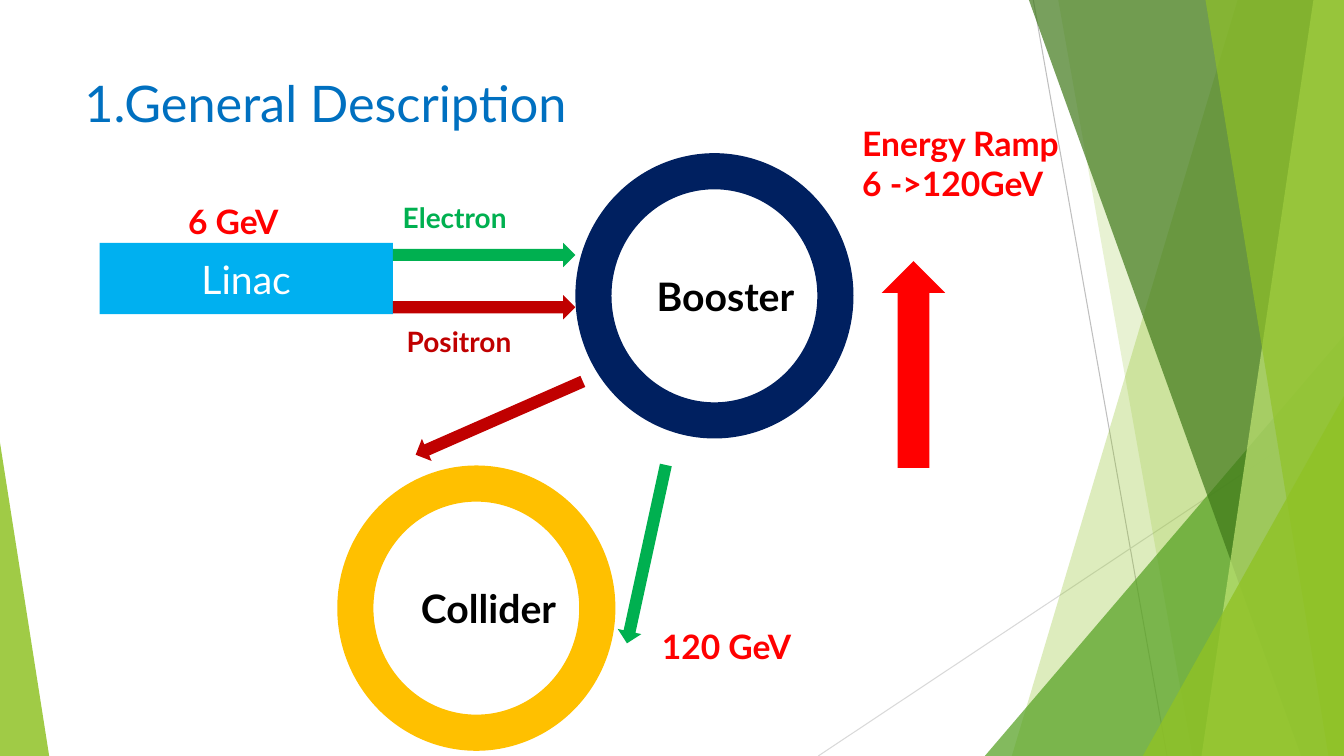
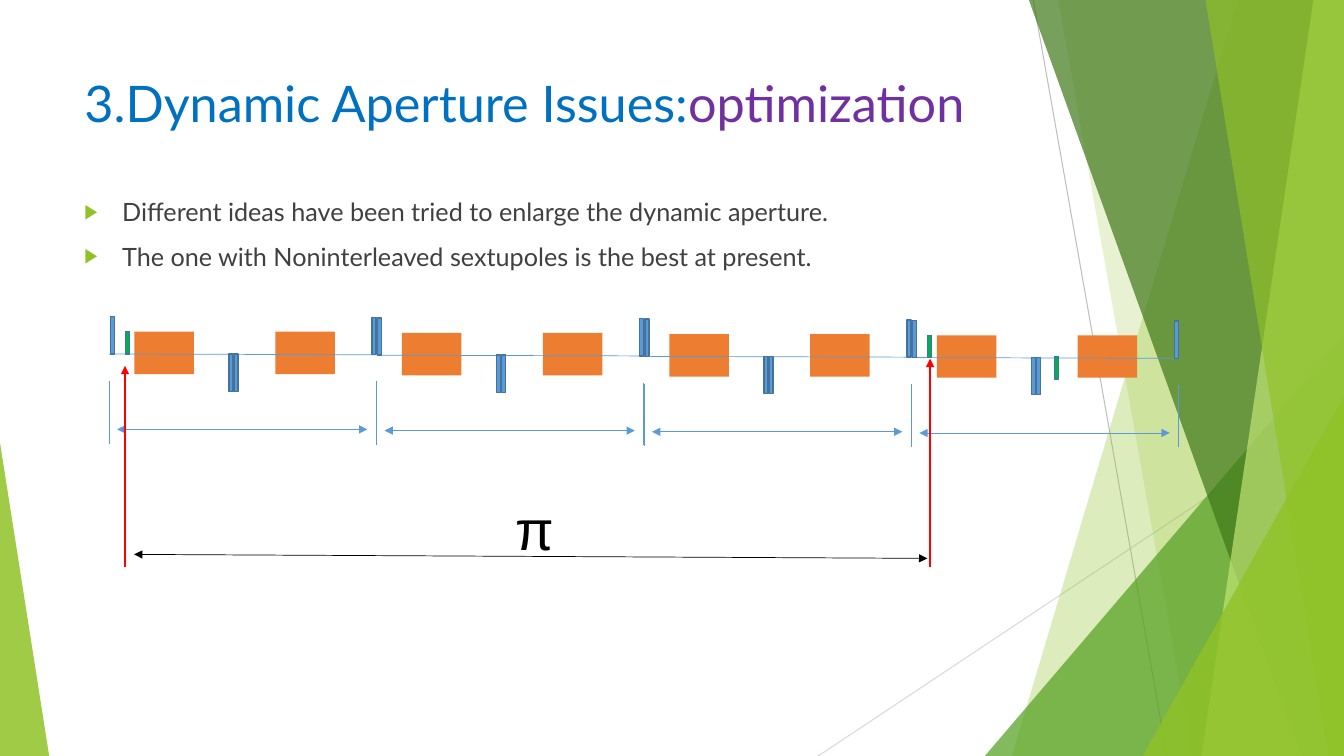
from lxml.etree import SubElement
from pptx import Presentation
from pptx.dml.color import RGBColor
from pptx.enum.shapes import MSO_CONNECTOR, MSO_SHAPE as Form
from pptx.enum.text import MSO_ANCHOR, PP_ALIGN
from pptx.oxml.ns import qn
from pptx.util import Cm, Pt

WIDTH, HEIGHT = 33.87, 19.05
FONT = "Lato"
COLORS = {
    "lime": "90C226", "leaf": "54A021", "forest": "3F7819", "pale": "C0E474",
    "grey": "BFBFBF", "light grey": "D9D9D9", "body": "404040",
    "black": "000000", "white": "FFFFFF", "title": "0070C0",
    "purple": "7030A0", "sky": "00B0F0", "navy": "002060",
    "gold": "FFC000", "green": "00B050", "dark red": "C00000",
    "red": "FF0000", "orange": "ED7D31", "blue": "5B9BD5", "edge": "43739E",
}


def color(name):
    return RGBColor.from_string(COLORS[name])


def paint(shape, fill, opacity=100, edge=None):
    """Give a shape a flat fill, with opacity in percent, and an optional edge."""
    shape.shadow.inherit = False
    shape.fill.solid()
    shape.fill.fore_color.rgb = color(fill)
    if opacity < 100:
        tint = next(shape.element.spPr.iter(qn("a:srgbClr")))
        SubElement(tint, qn("a:alpha"), val=str(opacity * 1000))
    if edge:
        shape.line.color.rgb = color(edge)
        shape.line.width = Pt(1)
    else:
        shape.line.fill.background()


def add_form(page, form, left, top, width, height, fill, opacity=100,
             edge=None, adjust=None, turn=0):
    shape = page.shapes.add_shape(form, Cm(left), Cm(top), Cm(width), Cm(height))
    paint(shape, fill, opacity, edge)
    if adjust is not None:
        shape.adjustments[0] = adjust
    shape.rotation = turn
    return shape


def add_line(page, start, end, line_color, weight, head=False, tail=False):
    """Draw a line with arrowheads at its start (head) and end (tail)."""
    ends = [Cm(value) for value in (*start, *end)]
    line = page.shapes.add_connector(MSO_CONNECTOR.STRAIGHT, *ends)
    line.line.color.rgb = color(line_color)
    line.line.width = Pt(weight)
    outline = line.line._get_or_add_ln()
    for tag, wanted in (("a:headEnd", head), ("a:tailEnd", tail)):
        if wanted:
            SubElement(outline, qn(tag), type="triangle")
    SubElement(line.element.spPr, qn("a:effectLst"))


def add_span(para, words, size, text_color, bold=False, font=FONT):
    span = para.add_run()
    span.text = words
    span.font.name = font
    span.font.size = Pt(size)
    span.font.bold = bold
    span.font.color.rgb = color(text_color)


def add_box(page, left, top, width, height):
    box = page.shapes.add_textbox(Cm(left), Cm(top), Cm(width), Cm(height))
    box.text_frame.word_wrap = True
    return box.text_frame


def add_label(page, left, top, width, height, lines, size, text_color,
              bold=True, font=FONT):
    frame = add_box(page, left, top, width, height)
    for index, words in enumerate(lines):
        para = frame.add_paragraph() if index else frame.paragraphs[0]
        add_span(para, words, size, text_color, bold, font)


def add_band(page, top_x, bottom_x, fill, opacity):
    """Fill from a slanted left side to the right edge of the page."""
    corners = [(WIDTH, 0), (WIDTH, HEIGHT), (bottom_x, HEIGHT)]
    builder = page.shapes.build_freeform(Cm(top_x), Cm(0))
    builder.add_line_segments([(Cm(x), Cm(y)) for x, y in corners], close=True)
    paint(builder.convert_to_shape(), fill, opacity)


def add_corner(page, left, width, height, fill, opacity, adjust=1):
    add_form(page, Form.ISOSCELES_TRIANGLE, left, HEIGHT - height, width, height,
             fill, opacity, adjust=adjust)


def add_backdrop(page):
    add_line(page, (26.04, 0), (29.41, HEIGHT), "grey", 0.75)
    add_line(page, (WIDTH, 10.24), (20.62, HEIGHT), "light grey", 0.75)
    add_band(page, 31.19, 25.5, "lime", 30)
    add_band(page, 26.67, 30.05, "lime", 20)
    add_corner(page, 24.82, 9.05, 10.59, "leaf", 72)
    add_band(page, 25.93, 32.79, "forest", 70)
    add_band(page, 33.1, 30.28, "pale", 70)
    add_band(page, 30.38, 33.48, "lime", 65)
    add_corner(page, 28.8, 5.07, 9.07, "lime", 80)
    add_corner(page, 0, 1.24, 7.9, "lime", 85, adjust=0)


def add_page(deck, title):
    """Add a page with backdrop and a title given as (words, colour) pairs."""
    page = deck.slides.add_slide(deck.slide_layouts[6])
    add_backdrop(page)
    frame = add_box(page, 1.88, 1.7, 23.88, 2.11)
    for words, text_color in title:
        add_span(frame.paragraphs[0], words, 36, text_color)
    return page


def add_accelerator(page, left, top):
    linac = add_form(page, Form.RECTANGLE, left, top + 3.15, 7.39, 1.8, "sky")
    linac.text_frame.vertical_anchor = MSO_ANCHOR.MIDDLE
    para = linac.text_frame.paragraphs[0]
    para.alignment = PP_ALIGN.CENTER
    add_span(para, "Linac", 28, "white")

    for x, y, fill in ((11.99, 0.89, "navy"), (5.99, 8.76, "gold")):
        add_form(page, Form.DONUT, left + x, top + y, 7.01, 7.19, fill,
                 adjust=0.13)

    beams = [
        (7.39, 3.15, 0, "green"),
        (7.39, 4.47, 0, "dark red"),
        (11.48, 10.69, 102.3, "green"),
        (7.77, 7.26, 156.3, "dark red"),
    ]
    for x, y, turn, fill in beams:
        add_form(page, Form.RIGHT_ARROW, left + x, top + y, 4.6, 0.61, fill,
                 turn=turn)
    add_form(page, Form.UP_ARROW, left + 19.71, top + 3.61, 1.6, 5.21, "red")

    labels = [
        (13.79, 3.76, 4.19, 1.45, ["Booster"], 28, "black"),
        (7.85, 11.63, 4.14, 1.45, ["Collider"], 28, "black"),
        (7.39, 1.96, 3.99, 1.12, ["Electron"], 20, "green"),
        (7.49, 5.08, 3.99, 1.12, ["Positron"], 20, "dark red"),
        (1.98, 1.96, 4.8, 1.27, ["6 GeV"], 24, "red"),
        (13.92, 12.67, 4.8, 1.27, ["120 GeV"], 24, "red"),
        (18.97, 0, 5.59, 2.31, ["Energy Ramp", "6 ->120GeV"], 24, "red"),
    ]
    for x, y, *rest in labels:
        add_label(page, left + x, top + y, *rest)


def add_bullets(page, left, top, width, height, items):
    frame = add_box(page, left, top, width, height)
    for index, words in enumerate(items):
        para = frame.add_paragraph() if index else frame.paragraphs[0]
        para.space_before = Pt(10)
        props = para._p.get_or_add_pPr()
        props.set("marL", str(Cm(0.95)))
        props.set("indent", str(-Cm(0.95)))
        tint = SubElement(props, qn("a:buClr"))
        SubElement(tint, qn("a:srgbClr"), val=COLORS["lime"])
        SubElement(props, qn("a:buSzPct"), val="80000")
        SubElement(props, qn("a:buFont"), typeface="Arial")
        SubElement(props, qn("a:buChar"), char="▶")
        add_span(para, words, 18, "body")


def add_cell(page, left, axis, width, sextupoles):
    """Draw one lattice cell on its axis; sextupoles are (x, y) offsets."""
    for x in (0.64, 4.19):
        add_form(page, Form.RECTANGLE, left + x, axis - 0.56, 1.5, 1.07, "orange")
    add_line(page, (left, axis), (left + width, axis + 0.02), "blue", 0.5)
    for x, y in ((0.03, -0.94), (6.63, -0.92), (3.02, 0), (3.15, 0)):
        add_form(page, Form.RECTANGLE, left + x, axis + y, 0.1, 0.94, "blue",
                 edge="edge")
    for x, y in sextupoles:
        add_form(page, Form.RECTANGLE, left + x, axis + y, 0.1, 0.56, "green",
                 edge="edge")
    for x in (left, left + width):
        add_line(page, (x, axis + 0.69), (x, axis + 2.26), "blue", 0.5)
    add_line(page, (left + 0.2, axis + 1.9), (left + width - 0.22, axis + 1.9),
             "blue", 0.5, head=True, tail=True)


def add_lattice(page, left, top):
    pitch, drop = 6.74, 0.03
    first = (0.41, -0.56)
    cells = [[first], [], [], [first, (3.61, -0.02)]]
    for index, sextupoles in enumerate(cells):
        add_cell(page, left + index * pitch, top + index * drop, pitch - 0.01,
                 sextupoles)


def add_phase_advance(page, left, top):
    for x, tip in ((0.4, 0.3), (20.69, 0.12)):
        add_line(page, (left + x, top + 5.38), (left + x, top + tip), "red", 1,
                 tail=True)
    add_line(page, (left + 0.63, top + 5.05), (left + 20.62, top + 5.15),
             "black", 0.5, head=True, tail=True)
    add_label(page, left + 9.98, top + 3.42, 6.99, 1.96, ["π"], 40, "black",
              bold=False, font="Arial")


def main():
    deck = Presentation()
    deck.slide_width, deck.slide_height = Cm(WIDTH), Cm(HEIGHT)

    page = add_page(deck, [("1.General Description", "title")])
    add_accelerator(page, 2.51, 2.97)

    page = add_page(deck, [("3.Dynamic Aperture Issues:", "title"),
                           ("optimization", "purple")])
    add_bullets(page, 1.88, 4.83, 23.88, 3, [
        "Different ideas have been tried to enlarge the dynamic aperture.",
        "The one with Noninterleaved sextupoles is the best at present.",
    ])
    add_lattice(page, 2.75, 8.92)
    add_phase_advance(page, 2.75, 8.92)

    deck.save("out.pptx")


if __name__ == "__main__":
    main()
